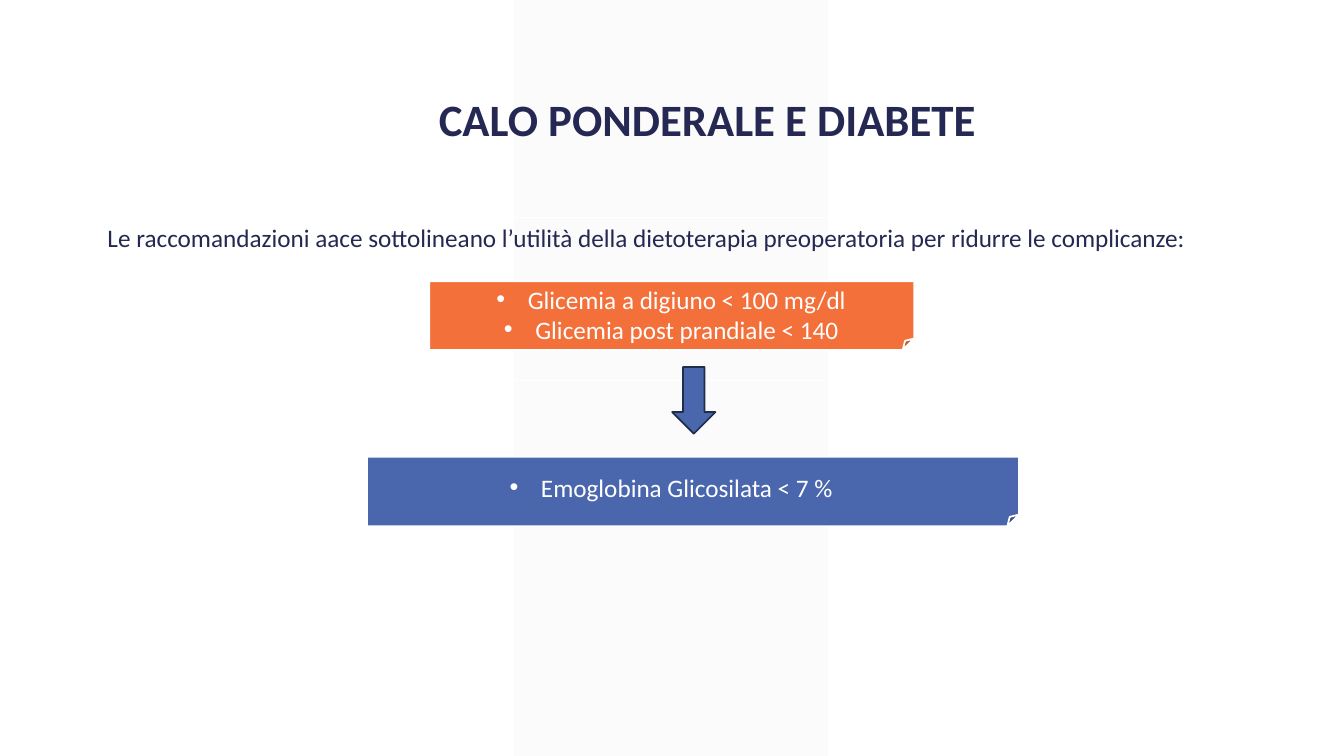
from dataclasses import dataclass

from lxml.etree import SubElement
from pptx import Presentation
from pptx.dml.color import RGBColor
from pptx.enum.shapes import MSO_SHAPE
from pptx.enum.text import MSO_ANCHOR, PP_ALIGN
from pptx.oxml.ns import qn
from pptx.util import Cm, Pt


@dataclass(frozen=True)
class Theme:
    font: str = "Calibri"
    ink: str = "242852"
    white: str = "FFFFFF"
    band: str = "F2F2F2"
    blue: str = "4A66AC"
    orange: str = "F3703A"
    arrow_edge: str = "202D4B"
    title_size: int = 32
    body_size: int = 18
    edge: float = 1.25
    thin_edge: float = 0.75


@dataclass(frozen=True)
class Box:
    left: float
    top: float
    width: float
    height: float

    def inner(self, dx, dy, width, height):
        return Box(self.left + dx, self.top + dy, width, height)

    def lengths(self):
        return Cm(self.left), Cm(self.top), Cm(self.width), Cm(self.height)


THEME = Theme()


def add_panel(slide, preset, box, fill=None, line=None, weight=THEME.edge):
    panel = slide.shapes.add_shape(preset, *box.lengths())
    panel.shadow.inherit = False
    if fill:
        panel.fill.solid()
        panel.fill.fore_color.rgb = RGBColor.from_string(fill)
    else:
        panel.fill.background()
    if line:
        panel.line.color.rgb = RGBColor.from_string(line)
        panel.line.width = Pt(weight)
    else:
        panel.line.fill.background()
    return panel


def prepare_text(holder, anchor=MSO_ANCHOR.TOP):
    frame = holder.text_frame
    frame.word_wrap = True
    frame.vertical_anchor = anchor
    return frame


def write(paragraph, wording, color=THEME.ink, size=THEME.body_size, align=PP_ALIGN.LEFT):
    paragraph.text = wording
    paragraph.alignment = align
    paragraph.font.name = THEME.font
    paragraph.font.size = Pt(size)
    paragraph.font.color.rgb = RGBColor.from_string(color)


def write_bullet(paragraph, wording):
    write(paragraph, wording, THEME.white, align=PP_ALIGN.CENTER)
    properties = paragraph._p.get_or_add_pPr()
    properties.set("marL", str(Cm(0.79)))
    properties.set("indent", str(-Cm(0.79)))
    SubElement(properties, qn("a:buFont")).set("typeface", "Arial")
    SubElement(properties, qn("a:buChar")).set("char", "•")


def add_band(slide, box):
    band = add_panel(slide, MSO_SHAPE.PARALLELOGRAM, box, THEME.band)
    band.adjustments[0] = 0
    color = band.fill._xPr.find(qn("a:solidFill"))[0]
    SubElement(color, qn("a:alpha")).set("val", "30000")


def add_title(slide, box, wording):
    title = prepare_text(slide.shapes.add_textbox(*box.lengths())).paragraphs[0]
    write(title, wording, size=THEME.title_size, align=PP_ALIGN.CENTER)
    title.font.bold = True


def add_recommendation(slide, box, introduction, targets):
    note = box.inner(8.36, 1.6, 12.22, 1.73)
    add_panel(slide, MSO_SHAPE.FOLDED_CORNER, note, THEME.orange, THEME.white)
    outline = add_panel(slide, MSO_SHAPE.RECTANGLE, box, line=THEME.white, weight=THEME.thin_edge)
    frame = prepare_text(outline)
    write(frame.paragraphs[0], introduction)
    frame.paragraphs[0].space_after = Pt(22)
    for target in targets:
        write_bullet(frame.add_paragraph(), target)


def add_outcome(slide, box, outcome):
    note = box.inner(6.79, 1.3, 16.43, 1.75)
    add_panel(slide, MSO_SHAPE.FOLDED_CORNER, note, THEME.blue, THEME.white)
    frame = prepare_text(slide.shapes.add_textbox(*box.lengths()), MSO_ANCHOR.BOTTOM)
    write_bullet(frame.paragraphs[0], outcome)


def add_arrow(slide, box):
    add_panel(slide, MSO_SHAPE.DOWN_ARROW, box, THEME.blue, THEME.arrow_edge)


def main():
    deck = Presentation()
    deck.slide_width, deck.slide_height = Cm(33.87), Cm(19.05)
    slide = deck.slides.add_slide(deck.slide_layouts[6])
    add_band(slide, Box(12.95, 0, 7.92, 19.05))
    add_recommendation(
        slide,
        Box(2.46, 5.49, 28.91, 4.11),
        "Le raccomandazioni aace sottolineano l’utilità della dietoterapia "
        "preoperatoria per ridurre le complicanze:",
        ["Glicemia a digiuno < 100 mg/dl", "Glicemia post prandiale < 140"],
    )
    add_outcome(slide, Box(2.46, 10.21, 28.91, 2.57), "Emoglobina Glicosilata < 7 %")
    add_title(slide, Box(7.01, 2.18, 21.64, 1.63), "CALO PONDERALE E DIABETE")
    add_arrow(slide, Box(16.94, 9.25, 1.09, 1.68))
    deck.save("out.pptx")


if __name__ == "__main__":
    main()
